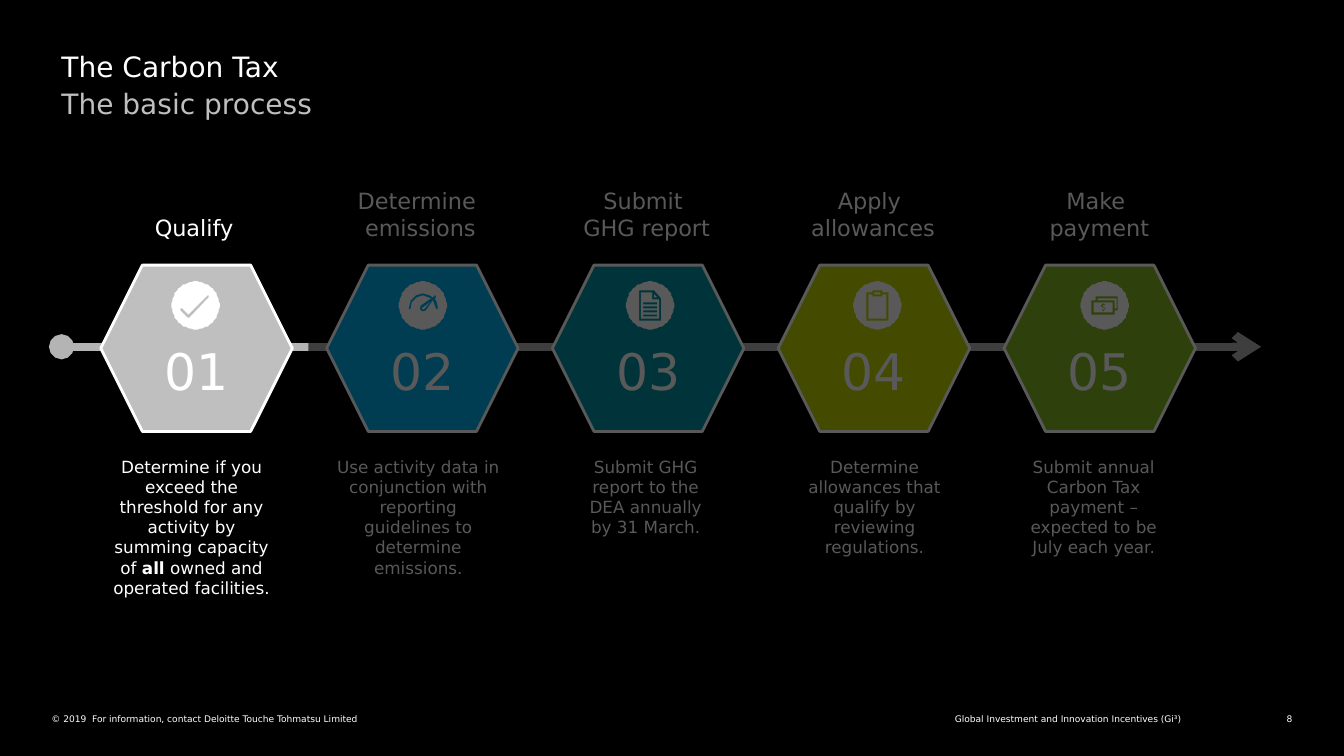
from dataclasses import dataclass
from math import cos, pi, sin

from lxml.etree import SubElement
from pptx import Presentation
from pptx.dml.color import RGBColor
from pptx.enum.shapes import MSO_CONNECTOR, MSO_SHAPE
from pptx.enum.text import MSO_ANCHOR, PP_ALIGN
from pptx.oxml.ns import qn
from pptx.util import Inches, Pt

BLACK = RGBColor(0x00, 0x00, 0x00)
WHITE = RGBColor(0xFF, 0xFF, 0xFF)
SILVER = RGBColor(0xBF, 0xBF, 0xBF)
LINE_GREY = RGBColor(0xB4, 0xB4, 0xB4)
BLUE = RGBColor(0x00, 0xB0, 0xF0)
TEAL = RGBColor(0x00, 0x97, 0xA9)
LIME = RGBColor(0xC4, 0xD6, 0x00)
GREEN = RGBColor(0x86, 0xBC, 0x25)

FONT = "DejaVu Sans"
WIDTH, HEIGHT = Inches(13.33), Inches(7.5)
HEXAGON_PITCH, ICON_PITCH, HEADING_PITCH = 16.8, 16.91, 16.84

Contour = list[tuple[float, float]]


@dataclass
class Area:
    """A rectangle in percent of the slide's width and height."""
    left: float
    top: float
    width: float
    height: float

    def lengths(self) -> tuple[int, int, int, int]:
        return across(self.left), down(self.top), across(self.width), down(self.height)


@dataclass
class Step:
    heading: str
    body: str  # asterisks enclose bold words
    body_left: float
    body_width: float
    color: RGBColor
    icon: list[Contour]


def across(percent: float) -> int:
    return round(WIDTH * percent / 100)


def down(percent: float) -> int:
    return round(HEIGHT * percent / 100)


def rectangle(left: float, top: float, right: float, bottom: float) -> Contour:
    return [(left, top), (right, top), (right, bottom), (left, bottom)]


# Icon outlines, in hundredths of an inch from the centre of the disc
DISC = [(23.7 * cos(turn * pi / 36), 23.7 * sin(turn * pi / 36)) for turn in range(72)]
CHECK = [[(13, -8), (-6, 12), (-8, 12), (-15, 5), (-15, 3), (-13, 3), (-7, 9),
          (12, -10), (13, -10)]]
GAUGE = [
    [(0, 2), (7, -3), (1, 4), (0, 4), (-1, 3)],
    [(15, 3), (14, -3), (12, -7), (13, -8), (13, -10), (12, -10), (10, -8), (7, -10),
     (0, -12), (-7, -10), (-12, -5), (-14, 3), (-13, 4), (-12, 3), (-11, -3), (-6, -8),
     (0, -10), (8, -7), (-2, 0), (-3, 3), (-2, 5), (0, 6), (3, 5), (10, -5), (13, 3),
     (14, 4)],
]
REPORT = [
    [(11, -7), (4, -15), (-11, -15), (-11, 15), (11, 15)],
    [(9, -6), (9, 13), (-9, 13), (-9, -13), (2, -13), (2, -6)],
    [(7, -8), (4, -8), (4, -11)],
    *[rectangle(-7, top, 7, top + 2) for top in range(-3, 10, 4)],
]
CLIPBOARD = [
    [(11, -13), (5, -13), (5, -15), (-5, -15), (-5, -13), (-11, -13), (-11, 15), (11, 15)],
    [(5, -11), (5, -9), (-5, -9), (-5, -11), (-9, -11), (-9, 13), (9, 13), (9, -11)],
    rectangle(-3, -13, 3, -11),
]
BANKNOTES = [
    [(13, 5), (10, 5), (10, 9), (-13, 9), (-13, -5), (-9, -5), (-9, -9), (13, -9)],
    [(-7, -7), (12, -7), (12, 3), (10, 3), (10, -5), (-7, -5)],
    rectangle(-11, -3, 8, 7),
    [(-3, -1), (-2, -1), (-2, -2), (-1, -2), (-1, -1), (1, -1), (0, 0), (-2, 0), (-2, 1),
     (0, 2), (1, 3), (0, 4.5), (-1, 5), (-1, 6), (-2, 6), (-2, 5), (-4, 3), (-3, 3.5),
     (-1, 4), (0, 3), (-2, 2.2), (-4, 1)],
]

STEPS = [
    Step("Qualify",
         "Determine if you exceed the threshold for any activity by summing capacity of "
         "*all* owned and operated facilities.", 7.28, 13.95, SILVER, CHECK),
    Step("Determine \nemissions",
         "Use activity data in conjunction with reporting guidelines to determine emissions.",
         24.15, 13.95, BLUE, GAUGE),
    Step("Submit \nGHG report", "Submit GHG report to the DEA annually by 31 March.",
         42.38, 11.33, TEAL, REPORT),
    Step("Apply \nallowances", "Determine allowances that qualify by reviewing regulations.",
         58.58, 12.98, LIME, CLIPBOARD),
    Step("Make \npayment", "Submit annual Carbon Tax payment – expected to be July each year.",
         75.68, 11.4, GREEN, BANKNOTES),
]


def write(box, text: str, *, size: float, color: RGBColor = WHITE,
          align: PP_ALIGN = PP_ALIGN.LEFT, anchor: MSO_ANCHOR = MSO_ANCHOR.TOP,
          inset: bool = True) -> None:
    frame = box.text_frame
    frame.word_wrap = True
    frame.vertical_anchor = anchor
    if not inset:
        frame.margin_left = frame.margin_right = frame.margin_top = frame.margin_bottom = 0
    para = frame.paragraphs[0]
    para.alignment = align
    for row, line in enumerate(text.split("\n")):
        if row:
            para.add_line_break()
        for position, words in enumerate(line.split("*")):
            span = para.add_run()
            span.text = words
            span.font.name = FONT
            span.font.size = Pt(size)
            span.font.bold = position % 2 == 1
            span.font.color.rgb = color


def add_text(slide, area: Area, text: str, **style) -> None:
    write(slide.shapes.add_textbox(*area.lengths()), text, **style)


def add_timeline(slide) -> None:
    line = slide.shapes.add_connector(MSO_CONNECTOR.STRAIGHT, across(4.58), down(45.87),
                                      across(93.83), down(45.87))
    line.line.color.rgb = LINE_GREY
    line.line.width = Pt(6)
    outline = line.line._get_or_add_ln()
    SubElement(outline, qn("a:headEnd"), type="oval")
    SubElement(outline, qn("a:tailEnd"), type="arrow")
    SubElement(line._element.spPr, qn("a:effectLst"))


def add_hexagon(slide, index: int, step: Step) -> None:
    area = Area(7.5 + index * HEXAGON_PITCH, 35.07, 14.25, 22)
    hexagon = slide.shapes.add_shape(MSO_SHAPE.HEXAGON, *area.lengths())
    hexagon.shadow.inherit = False
    hexagon.fill.solid()
    hexagon.fill.fore_color.rgb = step.color
    hexagon.line.color.rgb = WHITE
    hexagon.line.width = Pt(2)
    write(hexagon, f"{index + 1:02}", size=36, align=PP_ALIGN.CENTER, anchor=MSO_ANCHOR.BOTTOM)


def add_icon(slide, index: int, step: Step) -> None:
    # The glyph's contours cut holes into the disc
    builder = slide.shapes.build_freeform(*DISC[0], scale=Inches(0.01))
    builder.add_line_segments(DISC[1:])
    for contour in step.icon:
        builder.move_to(*contour[0])
        builder.add_line_segments(contour[1:])
    icon = builder.convert_to_shape(across(14.55 + index * ICON_PITCH), down(40.4))
    icon.shadow.inherit = False
    icon.fill.solid()
    icon.fill.fore_color.rgb = WHITE
    icon.line.fill.background()


def add_veil(slide) -> None:
    veil = slide.shapes.add_shape(MSO_SHAPE.RECTANGLE,
                                  *Area(22.95, 18.13, 74.48, 66.13).lengths())
    veil.shadow.inherit = False
    veil.fill.solid()
    veil.fill.fore_color.rgb = BLACK
    veil.line.fill.background()
    color = veil._element.spPr.find(qn("a:solidFill"))[0]
    SubElement(color, qn("a:alpha"), val="65000")


def main() -> None:
    deck = Presentation()
    deck.slide_width, deck.slide_height = WIDTH, HEIGHT
    slide = deck.slides.add_slide(deck.slide_layouts[6])
    slide.background.fill.solid()
    slide.background.fill.fore_color.rgb = BLACK

    # Footer
    add_text(slide, Area(47.78, 94.4, 40.13, 1.47),
             "Global Investment and Innovation Incentives (Gi³)",
             size=6.5, align=PP_ALIGN.RIGHT, inset=False)
    add_text(slide, Area(3.83, 94.4, 43.95, 1.47),
             "© 2019  For information, contact Deloitte Touche Tohmatsu Limited",
             size=6.5, inset=False)
    add_text(slide, Area(93.6, 94.4, 2.55, 1.47), "8",
             size=6.5, align=PP_ALIGN.RIGHT, inset=False)

    # Process steps
    add_timeline(slide)
    for index, step in enumerate(STEPS):
        add_hexagon(slide, index, step)
        add_icon(slide, index, step)
        add_text(slide, Area(7.44 + index * HEADING_PITCH, 24, 14, 8.53), step.heading,
                 size=16, align=PP_ALIGN.CENTER, anchor=MSO_ANCHOR.BOTTOM)
        add_text(slide, Area(step.body_left, 59.73, step.body_width, 20.13), step.body,
                 size=12, align=PP_ALIGN.CENTER)

    # Title, and the veil that dims the later steps
    add_text(slide, Area(3.83, 5.87, 92.33, 4.93), "The Carbon Tax", size=20)
    add_text(slide, Area(3.83, 10.8, 92.33, 11.07), "The basic process", size=20, color=SILVER)
    add_veil(slide)

    deck.save("out.pptx")


if __name__ == "__main__":
    main()
